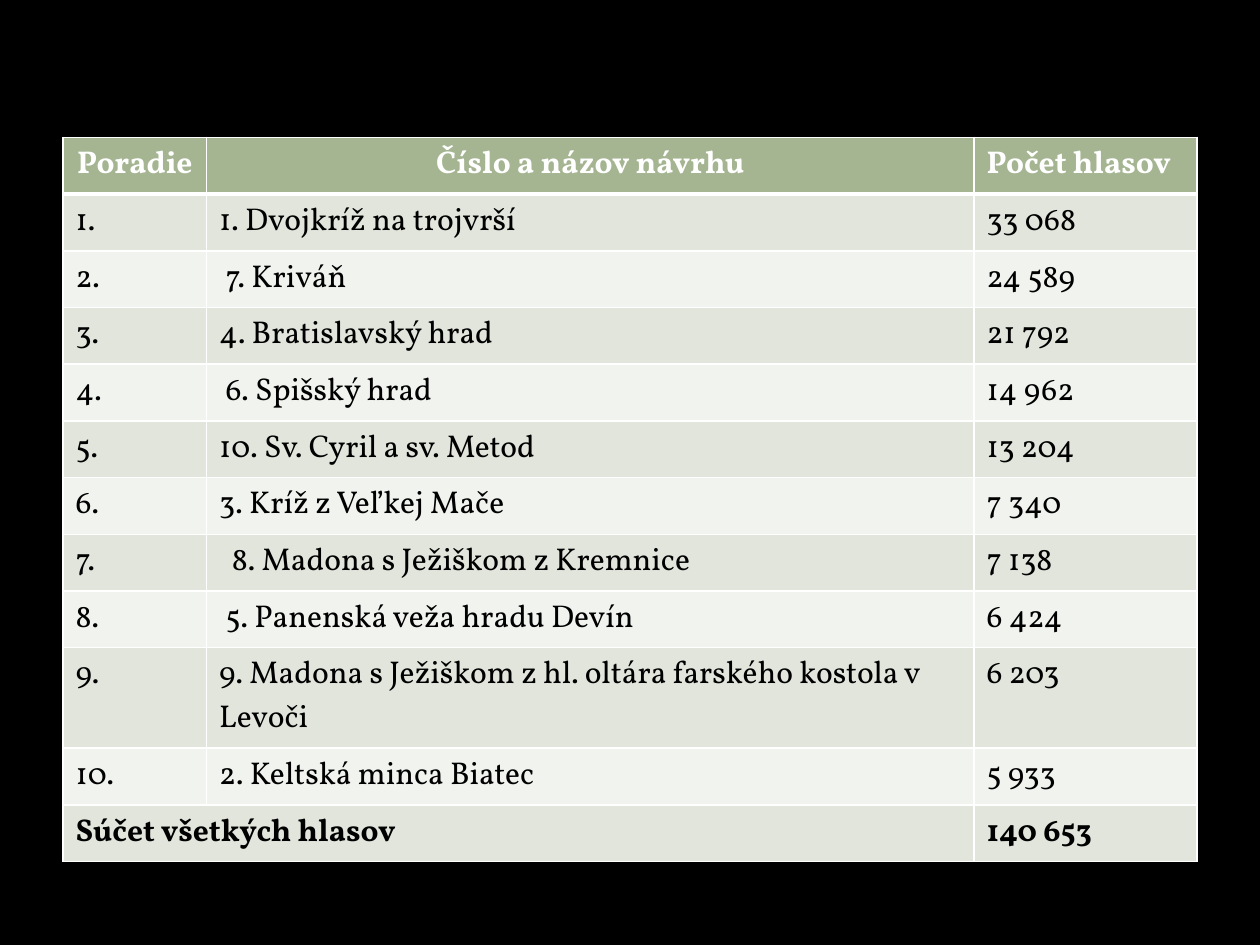
from pptx import Presentation
from pptx.dml.color import RGBColor
from pptx.enum.text import PP_ALIGN as Align
from pptx.oxml import parse_xml
from pptx.oxml.ns import nsdecls
from pptx.util import Inches, Pt

FONT = "Vollkorn"
BLACK, WHITE = "000000", "FFFFFF"
HEADER_FILL = "A5B592"
BAND_FILLS = ("E1E5DC", "F0F3EE")
COLUMN_WIDTHS = (1.14, 6.09, 1.77)
ROW_HEIGHT, TALL_ROW_HEIGHT, TALL_ROW = 0.45, 0.78, 9
CELL_MARGIN, INDENT_STEP = 0.1, 0.05

HEADERS = ("Poradie", "Číslo a názov návrhu", "Počet hlasov")
# Proposal, votes, indent steps before the proposal
RESULTS = (
    ("1. Dvojkríž na trojvrší", "33 068", 0),
    ("7. Kriváň", "24 589", 1),
    ("4. Bratislavský hrad", "21 792", 0),
    ("6. Spišský hrad", "14 962", 1),
    ("10. Sv. Cyril a sv. Metod", "13 204", 0),
    ("3. Kríž z Veľkej Mače", "7 340", 0),
    ("8. Madona s Ježiškom z Kremnice", "7 138", 2),
    ("5. Panenská veža hradu Devín", "6 424", 1),
    ("9. Madona s Ježiškom z hl. oltára farského kostola v Levoči", "6 203", 0),
    ("2. Keltská minca Biatec", "5 933", 0),
)
TOTAL = ("Súčet všetkých hlasov", "140 653")


def rgb(color):
    return RGBColor.from_string(color)


def paint(fill, color):
    fill.solid()
    fill.fore_color.rgb = rgb(color)


def set_borders(cell, widths):
    """Draw white cell borders; widths are points by side, in schema order."""
    properties = cell._tc.get_or_add_tcPr()
    for position, (side, width) in enumerate(widths.items()):
        border = parse_xml(
            f'<a:ln{side} {nsdecls("a")} w="{Pt(width)}"><a:solidFill>'
            f'<a:srgbClr val="{WHITE}"/></a:solidFill></a:ln{side}>'
        )
        properties.insert(position, border)


def write_cell(cell, text, color=BLACK, bold=False, align=Align.LEFT, indent=0):
    cell.margin_left = Inches(CELL_MARGIN + indent * INDENT_STEP)
    paragraph = cell.text_frame.paragraphs[0]
    paragraph.alignment = align
    run = paragraph.add_run()
    run.text = text
    for name, value in {"name": FONT, "size": Pt(18), "bold": bold}.items():
        setattr(run.font, name, value)
    run.font.color.rgb = rgb(color)


def add_results_table(slide):
    row_count = len(RESULTS) + 2
    height = ROW_HEIGHT * (row_count - 1) + TALL_ROW_HEIGHT
    table = slide.shapes.add_table(
        row_count, len(HEADERS), Inches(0.5), Inches(1.09),
        Inches(sum(COLUMN_WIDTHS)), Inches(height),
    ).table
    for column, width in zip(table.columns, COLUMN_WIDTHS):
        column.width = Inches(width)
    for index, row in enumerate(table.rows):
        row.height = Inches(TALL_ROW_HEIGHT if index == TALL_ROW else ROW_HEIGHT)
        for cell in row.cells:
            paint(cell.fill, BAND_FILLS[(index - 1) % 2] if index else HEADER_FILL)
            set_borders(cell, {"L": 1, "R": 1, "T": 3 if index == 1 else 1,
                               "B": 1 if index else 3})
    return table


def fill_results(table):
    for column, (title, align) in enumerate(
            zip(HEADERS, (Align.CENTER, Align.CENTER, Align.LEFT))):
        write_cell(table.cell(0, column), title, WHITE, True, align)
    for rank, (proposal, votes, indent) in enumerate(RESULTS, 1):
        write_cell(table.cell(rank, 0), f"{rank}.")
        write_cell(table.cell(rank, 1), proposal, indent=indent)
        write_cell(table.cell(rank, 2), votes)

    last = len(RESULTS) + 1
    table.cell(last, 0).merge(table.cell(last, 1))
    for column, text in zip((0, 2), TOTAL):
        write_cell(table.cell(last, column), text, bold=True)


def main():
    presentation = Presentation()
    presentation.slide_width, presentation.slide_height = Inches(10), Inches(7.5)
    slide = presentation.slides.add_slide(presentation.slide_layouts[6])
    paint(slide.background.fill, BLACK)
    fill_results(add_results_table(slide))
    presentation.save("out.pptx")


if __name__ == "__main__":
    main()
